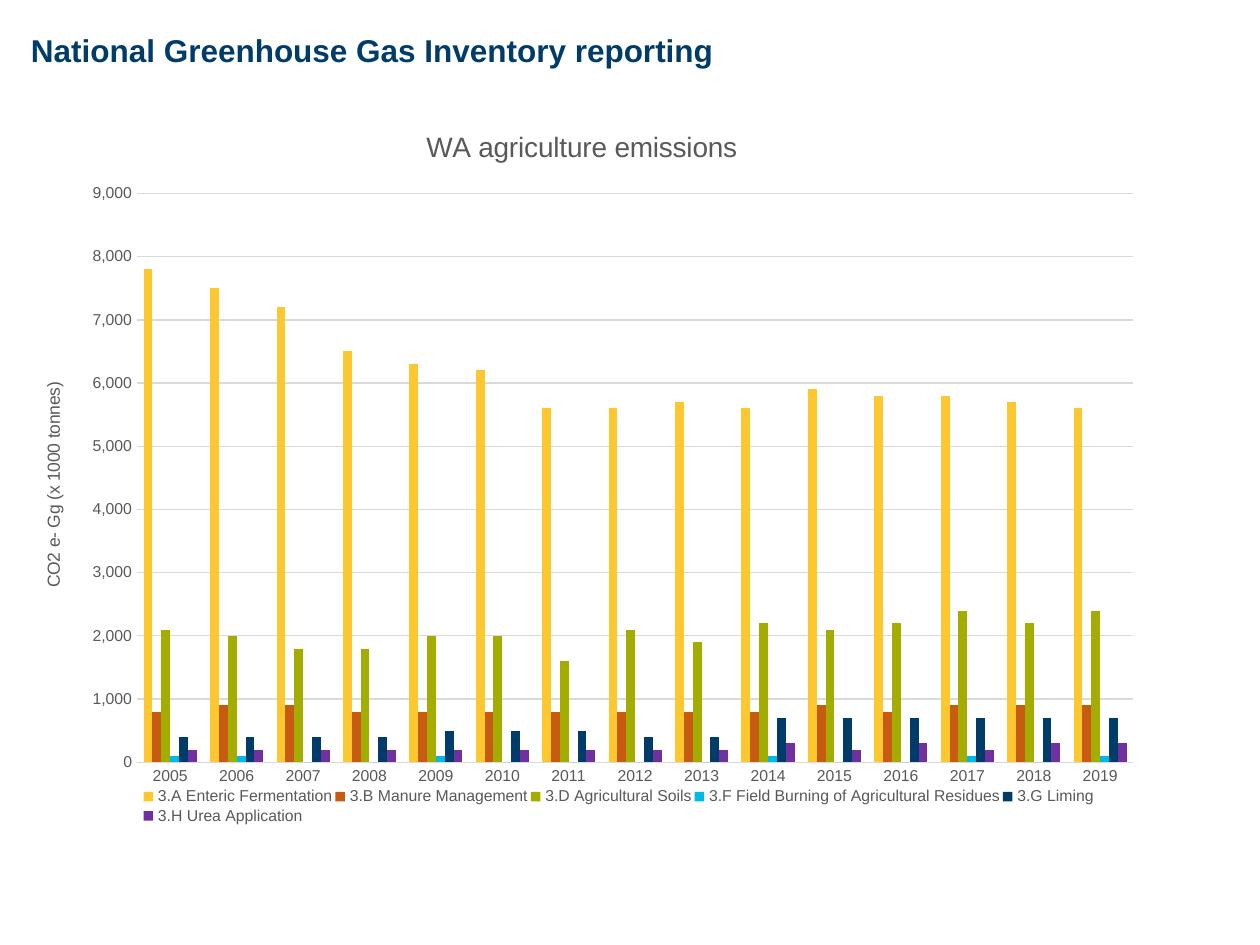
from lxml import etree
from pptx import Presentation
from pptx import util as u
from pptx.chart.data import CategoryChartData
from pptx.dml.color import RGBColor
from pptx.enum import chart as ch, text
from pptx.oxml.ns import qn

FONT, NAVY, GREY, RULE = "Arial", "003C69", "595959", "D9D9D9"
YEARS = [str(year) for year in range(2005, 2020)]
# name, colour, emissions per year
SOURCES = [
    ("3.A Enteric Fermentation", "FDC82F",
     [7800, 7500, 7200, 6500, 6300, 6200, 5600, 5600, 5700, 5600, 5900, 5800, 5800, 5700, 5600]),
    ("3.B Manure Management", "C75B12",
     [800, 900, 900, 800, 800, 800, 800, 800, 800, 800, 900, 800, 900, 900, 900]),
    ("3.D Agricultural Soils", "A2AD00",
     [2100, 2000, 1800, 1800, 2000, 2000, 1600, 2100, 1900, 2200, 2100, 2200, 2400, 2200, 2400]),
    ("3.F Field Burning of Agricultural Residues", "00B9E4",
     [100, 100, 0, 0, 100, 0, 0, 0, 0, 100, 0, 0, 100, 0, 100]),
    ("3.G Liming", NAVY,
     [400, 400, 400, 400, 500, 500, 500, 400, 400, 700, 700, 700, 700, 700, 700]),
    ("3.H Urea Application", "7030A0",
     [200, 200, 200, 200, 200, 200, 200, 200, 200, 300, 200, 300, 200, 300, 300]),
]


def colour(value):
    return RGBColor.from_string(value)


def set_values(target, values):
    for name, value in values.items():
        setattr(target, name, value)


def set_font(font, size, shade=GREY, bold=False):
    set_values(font, {"name": FONT, "size": u.Pt(size), "bold": bold})
    font.color.rgb = colour(shade)


def set_line(line, shade):
    line.color.rgb = colour(shade)
    line.width = u.Pt(0.75)


def place_part(element, index, inner=False, **percents):
    """Give a chart part a fixed place, in percent of the chart."""
    for old in element.findall(qn("c:layout")):
        element.remove(old)
    layout = etree.Element(qn("c:layout"))
    element.insert(index, layout)
    manual = etree.SubElement(layout, qn("c:manualLayout"))
    if inner:
        etree.SubElement(manual, qn("c:layoutTarget"), val="inner")
    for key in "xy":
        etree.SubElement(manual, qn(f"c:{key}Mode"), val="edge")
    for key, value in percents.items():
        etree.SubElement(manual, qn(f"c:{key}"), val=f"{value / 100:.4f}")


def add_heading(page, words):
    box = page.shapes.title
    set_values(box, {"left": u.Cm(0.37), "top": u.Cm(0.5),
                     "width": u.Cm(14.58), "height": u.Cm(1.02)})
    frame = box.text_frame
    set_values(frame, {"text": words, "word_wrap": False,
                       "vertical_anchor": text.MSO_ANCHOR.TOP})
    para = frame.paragraphs[0]
    para.alignment = text.PP_ALIGN.LEFT
    set_font(para.runs[0].font, 18, NAVY, True)


def add_chart_title(title, words, size, **percents):
    title.text_frame.text = words
    set_font(title.text_frame.paragraphs[0].runs[0].font, size)
    place_part(title._element, 1, **percents)


def format_axes(chart):
    for axis in (chart.category_axis, chart.value_axis):
        set_values(axis, {"major_tick_mark": ch.XL_TICK_MARK.NONE,
                          "minor_tick_mark": ch.XL_TICK_MARK.NONE})
        set_font(axis.tick_labels.font, 9)
    set_line(chart.category_axis.format.line, RULE)

    values = chart.value_axis
    set_values(values, {"minimum_scale": 0, "maximum_scale": 9000, "major_unit": 1000})
    set_values(values.tick_labels, {"number_format": "#,##0", "number_format_is_linked": False})
    values.format.line.fill.background()
    set_line(values.major_gridlines.format.line, RULE)
    title = values.axis_title
    add_chart_title(title, "CO2 e- Gg (x 1000 tonnes)", 10, x=2.1, y=37.3)
    body = title._element.find(".//" + qn("a:bodyPr"))
    body.set("rot", "-5400000")
    body.set("vert", "horz")


def add_emissions_chart(page):
    data = CategoryChartData(number_format="#,##0")
    data.categories = YEARS
    for name, _, emissions in SOURCES:
        data.add_series(name, emissions)
    chart = page.shapes.add_chart(ch.XL_CHART_TYPE.COLUMN_CLUSTERED, u.Cm(0.3), u.Cm(2.13),
                                  u.Cm(23.01), u.Cm(14.76), data).chart
    set_font(chart.font, 10, "000000")

    # Columns
    plot = chart.plots[0]
    set_values(plot, {"gap_width": 150, "overlap": 0, "vary_by_categories": False})
    for series, (_, shade, _) in zip(plot.series, SOURCES):
        series.format.fill.solid()
        series.format.fill.fore_color.rgb = colour(shade)
    place_part(chart._chartSpace.chart.plotArea, 0, inner=True, x=10.7, y=12, w=87.3, h=77.7)

    # Axes, title and legend
    format_axes(chart)
    add_chart_title(chart.chart_title, "WA agriculture emissions", 16, x=35.6, y=2.5)
    chart.has_legend = True
    legend = chart.legend
    set_values(legend, {"position": ch.XL_LEGEND_POSITION.BOTTOM, "include_in_layout": False})
    set_font(legend.font, 9)
    place_part(legend._element, 1, x=11, y=93, w=83.8, h=5.4)


def main():
    deck = Presentation()
    set_values(deck, {"slide_width": u.Cm(25.4), "slide_height": u.Cm(19.05)})
    page = deck.slides.add_slide(deck.slide_layouts[5])
    add_emissions_chart(page)
    add_heading(page, "National Greenhouse Gas Inventory reporting")
    deck.save("out.pptx")


if __name__ == "__main__":
    main()
